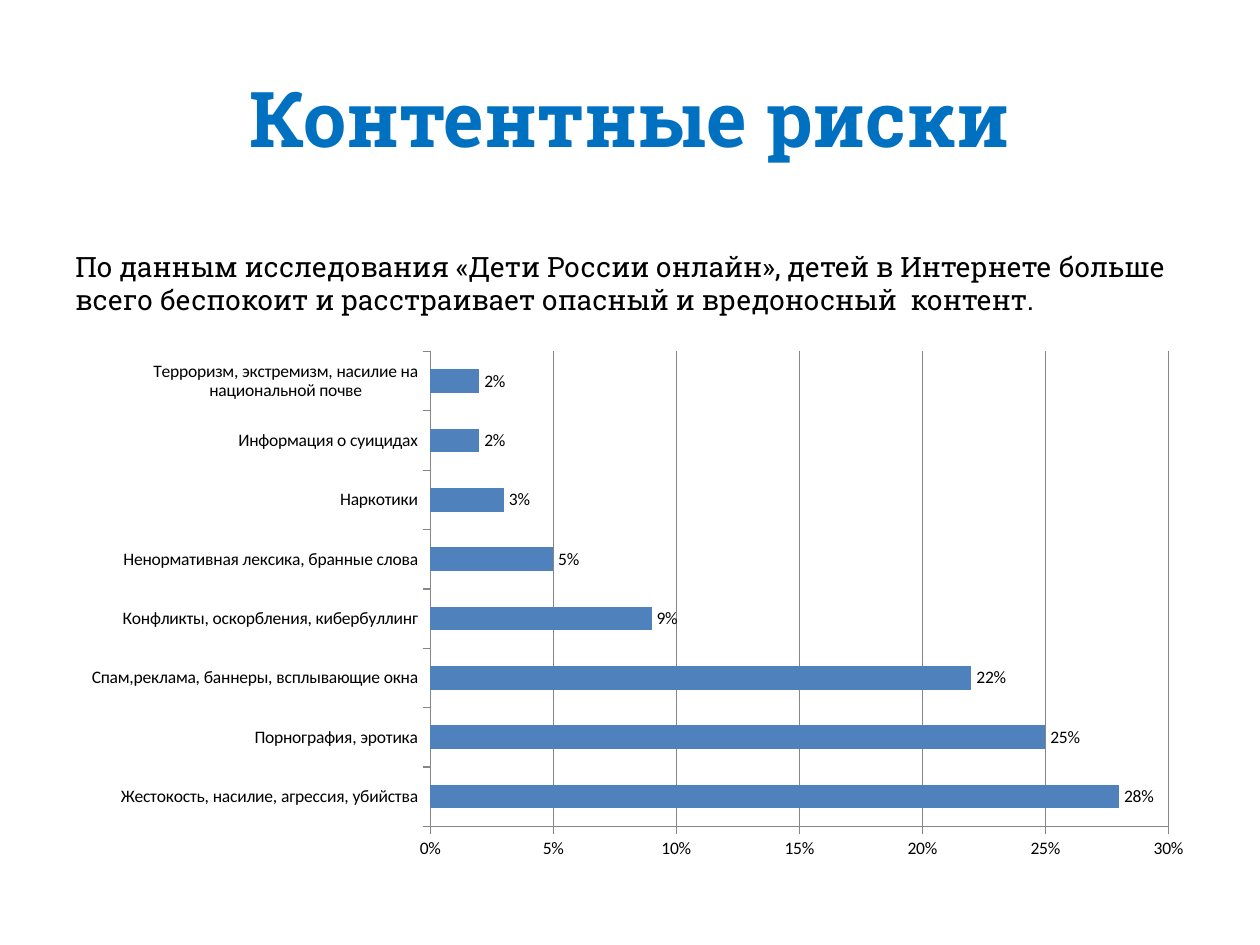
from pptx import Presentation
from pptx import util as u
from pptx.chart import data as cd
from pptx.dml import color
from pptx.enum import chart as ch, text as tx

SCALE = 914400 / 126
SLAB = "Roboto Slab"
BLACK, BLUE, BAR, GREY = "000000", "0070C0", "4F81BD", "868686"

RISKS = [
    ("Жестокость, насилие, агрессия, убийства", 0.28),
    ("Порнография, эротика", 0.25),
    ("Спам,реклама, баннеры, всплывающие окна", 0.22),
    ("Конфликты, оскорбления, кибербуллинг", 0.09),
    ("Ненормативная лексика, бранные слова", 0.05),
    ("Наркотики", 0.03),
    ("Информация о суицидах", 0.02),
    ("Терроризм, экстремизм, насилие на национальной почве", 0.02),
]


def px(n):
    return u.Emu(round(n * SCALE))


def rgb(code):
    return color.RGBColor.from_string(code)


def assign(obj, vals):
    for key, val in vals.items():
        setattr(obj, key, val)


def style(font, code, **vals):
    assign(font, vals)
    font.color.rgb = rgb(code)


def add_title(slide, box, words):
    title = slide.shapes.title
    assign(title, dict(zip(("left", "top", "width", "height"), map(px, box))))
    frame = title.text_frame
    assign(frame, {"vertical_anchor": tx.MSO_ANCHOR.MIDDLE, "word_wrap": True})
    para = frame.paragraphs[0]
    para.alignment = tx.PP_ALIGN.CENTER
    run = para.add_run()
    run.text = words
    style(run.font, BLUE, name=SLAB, size=u.Pt(44), bold=True)


def add_lead(slide, box, words):
    frame = slide.shapes.add_textbox(*map(px, box)).text_frame
    assign(frame, {"word_wrap": True,
                   "auto_size": tx.MSO_AUTO_SIZE.SHAPE_TO_FIT_TEXT})
    run = frame.paragraphs[0].add_run()
    run.text = words
    style(run.font, BLACK, name=SLAB, size=u.Pt(16))


def set_line(line):
    line.width = u.Pt(0.75)
    line.color.rgb = rgb(GREY)


def add_bars(slide, box, rows):
    data = cd.CategoryChartData(number_format="0%")
    data.categories = [name for name, share in rows]
    data.add_series("Series 1", [share for name, share in rows])
    kind = ch.XL_CHART_TYPE.BAR_CLUSTERED
    chart = slide.shapes.add_chart(kind, *map(px, box), data).chart
    assign(chart, {"has_legend": False, "has_title": False})
    style(chart.font, BLACK, name="Calibri", size=u.Pt(10))

    plot = chart.plots[0]
    assign(plot, {"gap_width": 150, "vary_by_categories": False,
                  "has_data_labels": True})
    assign(plot.data_labels, {
        "show_value": True, "number_format": "0%",
        "number_format_is_linked": False,
        "position": ch.XL_LABEL_POSITION.OUTSIDE_END})
    fill = plot.series[0].format.fill
    fill.solid()
    fill.fore_color.rgb = rgb(BAR)

    cats, vals = chart.category_axis, chart.value_axis
    for axis in (cats, vals):
        assign(axis, {"major_tick_mark": ch.XL_TICK_MARK.OUTSIDE,
                      "minor_tick_mark": ch.XL_TICK_MARK.NONE})
        set_line(axis.format.line)
    cats.has_major_gridlines = False
    assign(vals, {"has_major_gridlines": True, "minimum_scale": 0,
                  "maximum_scale": 0.3, "major_unit": 0.05})
    assign(vals.tick_labels, {"number_format": "0%",
                              "number_format_is_linked": False})
    set_line(vals.major_gridlines.format.line)


def main():
    deck = Presentation()
    assign(deck, {"slide_width": px(1260), "slide_height": px(945)})
    slide = deck.slides.add_slide(deck.slide_layouts[5])
    add_title(slide, (63, 38, 1134, 158), "Контентные риски")
    add_lead(slide, (63, 243, 1121, 81),
             "По данным исследования «Дети России онлайн», детей в Интернете "
             "больше всего беспокоит и расстраивает опасный и вредоносный  "
             "контент.")
    add_bars(slide, (69, 341, 1137, 528), RISKS)
    deck.save("out.pptx")


if __name__ == "__main__":
    main()
